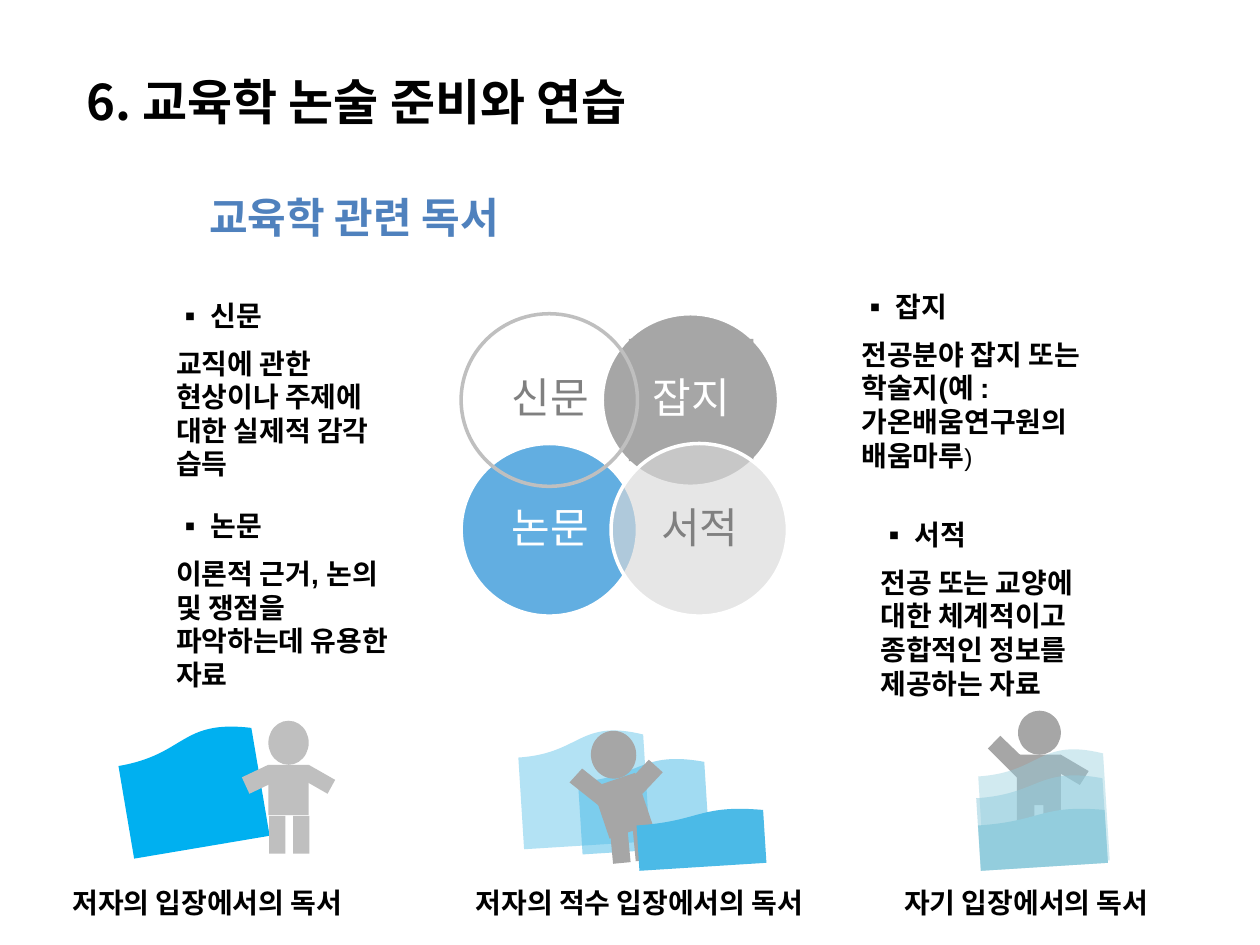
from pptx import Presentation, util as u
from pptx.dml.color import RGBColor
from pptx.enum import shapes, text
from pptx.oxml import parse_xml
from pptx.oxml.ns import nsdecls, qn

PX = 9144  # 100 px to the inch
BLACK = RGBColor(0, 0, 0)
WHITE = RGBColor(255, 255, 255)
HEADING = RGBColor(0x4F, 0x81, 0xBD)
DARK = RGBColor(0xA6, 0xA6, 0xA6)
SILVER = RGBColor(0xBF, 0xBF, 0xBF)
PALE = RGBColor(0xD9, 0xD9, 0xD9)
GREY = RGBColor(0x80, 0x80, 0x80)
BLUE = RGBColor(0x34, 0x96, 0xD8)
CYAN = RGBColor(0x00, 0xB0, 0xF0)
SKY = RGBColor(0x4B, 0xBA, 0xE7)
TEAL = RGBColor(0x93, 0xCD, 0xDD)
KOREAN = "Noto Sans CJK KR"
CENTER = text.PP_ALIGN.CENTER
KIND = shapes.MSO_SHAPE
OVAL, RECT, SHEET = KIND.OVAL, KIND.RECTANGLE, KIND.FLOWCHART_DOCUMENT


def paint(shape, color, opacity=100, line=None):
    shape.shadow.inherit = False
    if color is None:
        shape.fill.background()
    else:
        shape.fill.solid()
        shape.fill.fore_color.rgb = color
        if opacity < 100:
            fill = shape.fill._xPr.find(qn("a:solidFill"))
            fill[0].append(parse_xml(f'<a:alpha {nsdecls("a")} val="{opacity * 1000}"/>'))
    if line is None:
        shape.line.fill.background()
    else:
        shape.line.color.rgb = line
        shape.line.width = u.Pt(2)


def write(para, words, size=16, color=BLACK, name=KOREAN, bold=True, **layout):
    span = para.add_run()
    span.text = words
    span.font.color.rgb = color
    for key, value in dict(size=u.Pt(size), name=name, bold=bold).items():
        setattr(span.font, key, value)
    span.font._element.append(parse_xml(f'<a:ea {nsdecls("a")} typeface="{KOREAN}"/>'))
    for key, value in layout.items():
        setattr(para, key, value)


deck = Presentation()
deck.slide_width, deck.slide_height = 1000 * PX, 750 * PX
page = deck.slides.add_slide(deck.slide_layouts[5])

title = page.shapes.title
place = dict(left=59, top=52, width=798, height=55)
for key, value in place.items():
    setattr(title, key, value * PX)
frame = title.text_frame
frame.vertical_anchor = text.MSO_ANCHOR.TOP
frame.auto_size = text.MSO_AUTO_SIZE.NONE
write(frame.paragraphs[0], "6. 교육학 논술 준비와 연습", 28, alignment=text.PP_ALIGN.LEFT)

box = page.shapes.add_textbox(141 * PX, 147 * PX, 280 * PX, 50 * PX)
box.text_frame.word_wrap = False
write(box.text_frame.paragraphs[0], "교육학 관련 독서", 24, HEADING, alignment=CENTER)

# Readers: (preset, left, top, width, height, rotation, colour, opacity),
# or a list of corner points for an arm, in the colour of the body
readers = [
    (DARK, [
        (OVAL, 808, 564, 34, 35, 0, DARK, 100),
        (RECT, 807, 599, 35, 40, 0, DARK, 100),
        [(794, 584), (820, 609), (809, 619), (784, 594)],
        (RECT, 799, 647, 30, 14, 90, DARK, 100),
        (RECT, 820, 647, 30, 14, 90, DARK, 100),
        [(835, 610), (842, 599), (864, 612), (857, 623)],
        (SHEET, 776, 616, 101, 72, 176.4, TEAL, 52),
        (SHEET, 777, 643, 101, 45, 176.4, TEAL, 100),
        (SHEET, 778, 595, 100, 91, 176.4, TEAL, 42),
    ]),
    (SILVER, [
        (SHEET, 98, 580, 109, 93, 170.4, CYAN, 100),
        (OVAL, 213, 572, 32, 35, 0, SILVER, 100),
        (RECT, 213, 607, 32, 40, 0, SILVER, 100),
        [(192, 617), (213, 607), (219, 620), (198, 630)],
        (RECT, 205, 656, 30, 13, 90, SILVER, 100),
        (RECT, 224, 656, 30, 13, 90, SILVER, 100),
        [(239, 618), (245, 607), (266, 619), (260, 630)],
    ]),
    (DARK, [
        (SHEET, 460, 603, 101, 72, 176.4, SKY, 52),
        (SHEET, 413, 580, 100, 91, 176.4, SKY, 42),
        (OVAL, 469, 580, 36, 38, 354.6, DARK, 100),
        (RECT, 476, 618, 36, 43, 341.3, DARK, 100),
        [(462, 610), (491, 633), (481, 644), (452, 621)],
        (RECT, 476, 662, 32, 14, 84.6, DARK, 100),
        (RECT, 494, 660, 32, 14, 84.6, DARK, 100),
        [(515, 603), (526, 613), (510, 630), (499, 620)],
        (SHEET, 506, 643, 101, 45, 176.4, SKY, 100),
    ]),
]
for body, parts in readers:
    group = page.shapes.add_group_shape()
    for part in parts:
        if isinstance(part, list):
            outline = group.shapes.build_freeform(*part[0], scale=PX)
            outline.add_line_segments(part[1:], close=True)
            paint(outline.convert_to_shape(), body)
        else:
            kind, *bounds, turn, color, opacity = part
            shape = group.shapes.add_shape(kind, *[n * PX for n in bounds])
            shape.rotation = turn
            paint(shape, color, opacity)

captions = [(343, "저자의 적수 입장에서의 독서"), (0, "저자의 입장에서의 독서"),
            (650, "자기 입장에서의 독서")]
for left, words in captions:
    box = page.shapes.add_textbox(left * PX, 698 * PX, 329 * PX, 37 * PX)
    box.text_frame.word_wrap = True
    write(box.text_frame.paragraphs[0], words, name="Arial", alignment=CENTER)

# Four overlapping circles, each with a label box inset by the same amount
circles = [
    (478, 249, "잡지", DARK, 100, WHITE, WHITE, DARK),
    (366, 352, "논문", BLUE, 77, WHITE, WHITE, None),
    (485, 352, "서적", PALE, 65, WHITE, GREY, None),
    (366, 249, "신문", None, 100, SILVER, GREY, None),
]
venn = page.shapes.add_group_shape()
for left, top, words, color, opacity, line, ink, backing in circles:
    circle = venn.shapes.add_shape(OVAL, left * PX, top * PX, 140 * PX, 137 * PX)
    paint(circle, color, opacity, line)
    label = venn.shapes.add_shape(RECT, (left + 21) * PX, (top + 20) * PX, 99 * PX, 97 * PX)
    paint(label, backing)
    frame = label.text_frame
    margins = dict(margin_left=9, margin_top=3, margin_right=9, margin_bottom=3)
    for key, value in margins.items():
        setattr(frame, key, value * PX)
    frame.vertical_anchor = text.MSO_ANCHOR.MIDDLE
    write(frame.paragraphs[0], words, 24, ink, bold=False, alignment=CENTER, line_spacing=0.9)

notes = [
    (130, 232, 205, 131, " 신문", "교직에 관한 현상이나 주제에 대한 실제적 감각 습득", ""),
    (130, 399, 205, 131, " 논문", "이론적 근거, 논의 및 쟁점을 파악하는데 유용한 자료", ""),
    (689, 406, 215, 158, " 서적",
     "전공 또는 교양에 대한 체계적이고 종합적인 정보를 제공하는 자료", ""),
    (674, 225, 205, 158, " 잡지",
     "전공분야 잡지 또는 학술지(예 : 가온배움연구원의 배움마루", ")"),
]
for *bounds, heading, detail, ending in notes:
    box = page.shapes.add_textbox(*[n * PX for n in bounds])
    frame = box.text_frame
    frame.word_wrap = True
    para = frame.paragraphs[0]
    write(para, heading)
    for mark in (f'buFont {nsdecls("a")} typeface="{KOREAN}"', f'buChar {nsdecls("a")} char="▪"'):
        para._p.get_or_add_pPr().append(parse_xml(f"<a:{mark}/>"))
    para = frame.add_paragraph()
    write(para, detail, name="Arial", space_before=u.Pt(8))
    if ending:
        write(para, ending, 14, name="Arial", bold=False)

deck.save("out.pptx")
